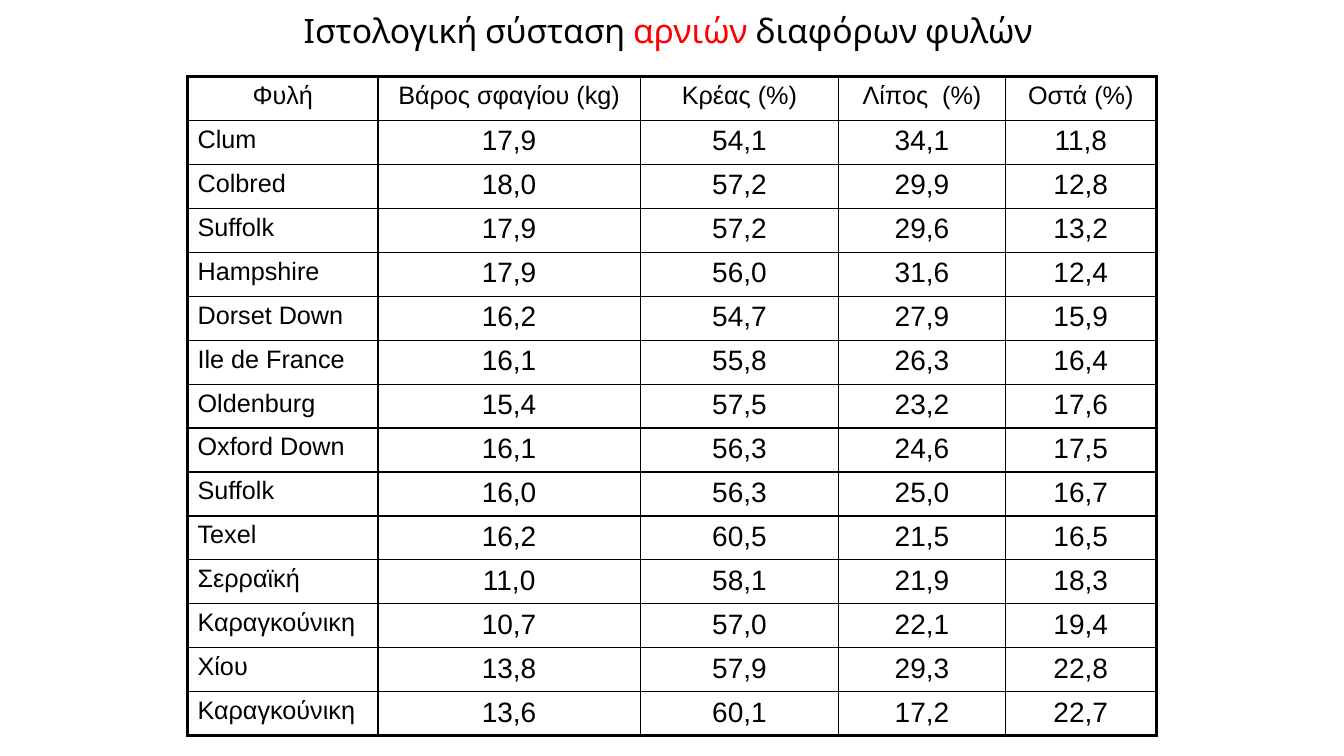
from lxml.etree import SubElement
from pptx import Presentation
from pptx.dml.color import RGBColor
from pptx.enum.text import MSO_AUTO_SIZE, PP_ALIGN
from pptx.oxml.ns import qn
from pptx.util import Inches, Pt

BLACK, RED = "000000", "FF0000"
LEFT, WIDTH = 1.86, 9.61
WIDTHS = [1.89, 2.6, 1.97, 1.65, 1.5]
TABLE_TOP, TABLE_HEIGHT = 0.76, 6.54
THIN, THICK = 1, 2.25
TITLE = [("Ιστολογική σύσταση ", BLACK), ("αρνιών", RED), (" διαφόρων φυλών ", BLACK)]
HEADS = ["Φυλή", "Βάρος σφαγίου (kg)", "Κρέας (%)", "Λίπος  (%)", "Οστά (%)"]
BREEDS = [
    ["Clum", "17,9", "54,1", "34,1", "11,8"],
    ["Colbred", "18,0", "57,2", "29,9", "12,8"],
    ["Suffolk", "17,9", "57,2", "29,6", "13,2"],
    ["Hampshire", "17,9", "56,0", "31,6", "12,4"],
    ["Dorset Down", "16,2", "54,7", "27,9", "15,9"],
    ["Ile de France", "16,1", "55,8", "26,3", "16,4"],
    ["Oldenburg", "15,4", "57,5", "23,2", "17,6"],
    ["Oxford Down", "16,1", "56,3", "24,6", "17,5"],
    ["Suffolk", "16,0", "56,3", "25,0", "16,7"],
    ["Texel", "16,2", "60,5", "21,5", "16,5"],
    ["Σερραϊκή", "11,0", "58,1", "21,9", "18,3"],
    ["Καραγκούνικη", "10,7", "57,0", "22,1", "19,4"],
    ["Χίου", "13,8", "57,9", "29,3", "22,8"],
    ["Καραγκούνικη", "13,6", "60,1", "17,2", "22,7"],
]


def style(run, face, size, color):
    """Set the font of a run."""
    run.font.name = face
    run.font.size = Pt(size)
    run.font.color.rgb = RGBColor.from_string(color)


def add_title(slide):
    """Add the heading with its coloured word."""
    box = slide.shapes.add_textbox(Inches(LEFT), Inches(0.05), Inches(WIDTH), Inches(0.5))
    frame = box.text_frame
    frame.word_wrap = True
    frame.auto_size = MSO_AUTO_SIZE.SHAPE_TO_FIT_TEXT
    line = frame.paragraphs[0]
    line.alignment = PP_ALIGN.CENTER
    for text, color in TITLE:
        run = line.add_run()
        run.text = text
        style(run, "Cabin", 24, color)


def set_edge(cell, side, width):
    """Draw one border of a cell."""
    edge = SubElement(cell._tc.get_or_add_tcPr(), qn(f"a:ln{side}"), w=str(Pt(width)))
    fill = SubElement(edge, qn("a:solidFill"))
    SubElement(fill, qn("a:srgbClr"), val=BLACK)


def fill_cell(cell, text, size, align, outer):
    """Fill a cell with text and frame it, thick on its outer sides."""
    cell.text_frame.text = text
    line = cell.text_frame.paragraphs[0]
    line.alignment = align
    style(line.runs[0], "Arial", size, BLACK)
    for side in "LRTB":
        set_edge(cell, side, THICK if side in outer else THIN)
    cell.fill.background()


def add_grid(slide):
    """Add the table of breeds."""
    data = [HEADS] + BREEDS
    rows, cols = len(data), len(HEADS)
    table = slide.shapes.add_table(
        rows, cols, Inches(LEFT), Inches(TABLE_TOP), Inches(WIDTH), Inches(TABLE_HEIGHT)
    ).table
    table.first_row = table.horz_banding = False
    for col, width in zip(table.columns, WIDTHS):
        col.width = Inches(width)
    for i, row in enumerate(data):
        for j, text in enumerate(row):
            ends = {"L": j == 0, "R": j == cols - 1, "T": i == 0, "B": i == rows - 1}
            outer = [side for side, hit in ends.items() if hit]
            size = 18 if i == 0 or j == 0 else 20
            align = PP_ALIGN.LEFT if i and j == 0 else PP_ALIGN.CENTER
            fill_cell(table.cell(i, j), text, size, align, outer)


def main():
    """Build and save the slide."""
    deck = Presentation()
    deck.slide_width, deck.slide_height = Inches(13.33), Inches(7.5)
    slide = deck.slides.add_slide(deck.slide_layouts[6])
    add_grid(slide)
    add_title(slide)
    deck.save("out.pptx")


if __name__ == "__main__":
    main()
